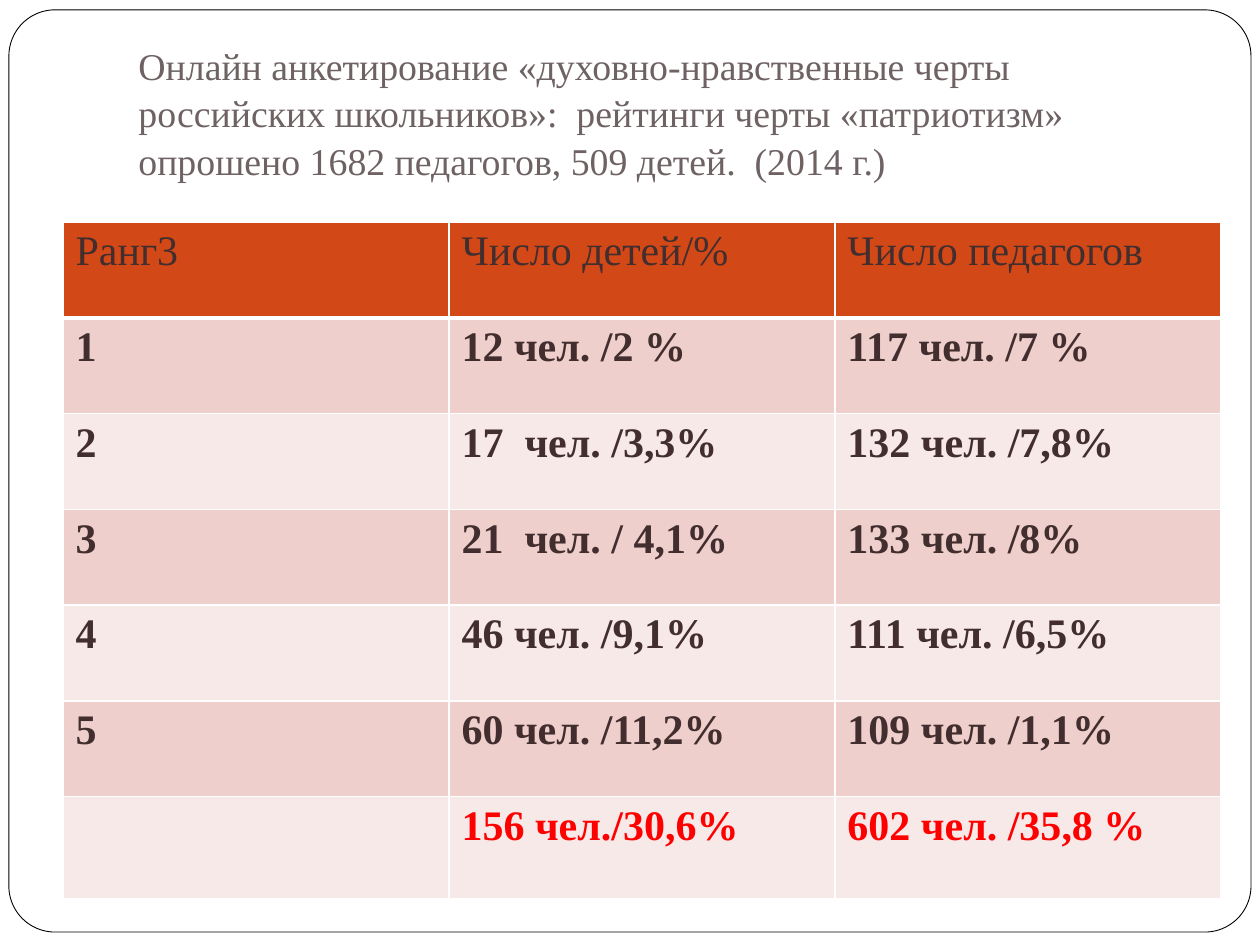
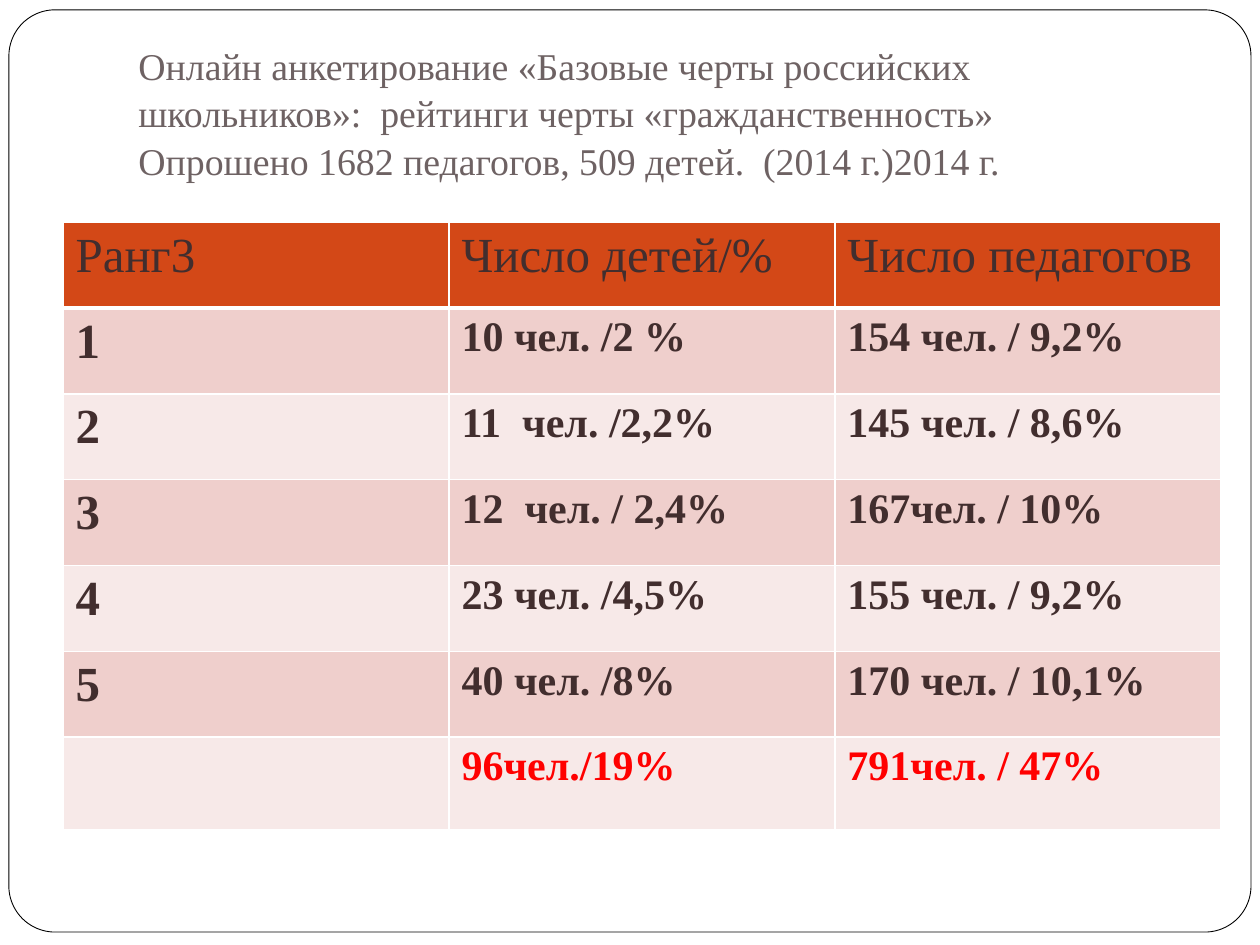
from lxml.etree import SubElement
from pptx import Presentation
from pptx.dml.color import RGBColor
from pptx.enum.shapes import MSO_SHAPE
from pptx.enum.text import MSO_ANCHOR, MSO_AUTO_SIZE, PP_ALIGN
from pptx.oxml.ns import qn
from pptx.util import Cm, Pt

WHITE = RGBColor(0xFF, 0xFF, 0xFF)
BLACK = RGBColor(0x00, 0x00, 0x00)
TITLE_GREY = RGBColor(0x6E, 0x62, 0x63)
TEXT_BROWN = RGBColor(0x42, 0x2E, 0x2E)
TOTAL_RED = RGBColor(0xFF, 0x00, 0x00)
HEADER_ORANGE = RGBColor(0xD3, 0x48, 0x17)
BANDS = [RGBColor(0xF7, 0xE9, 0xE8), RGBColor(0xEF, 0xCF, 0xCC)]
FONT = "Times New Roman"

HEADER = ("Ранг3", "Число детей/%", "Число педагогов")
COL_WIDTH = Cm(7.78)

# title, rows, row height, total row height, size of the header and rank column
SURVEYS = [
    ("Онлайн анкетирование «духовно-нравственные черты российских школьников»:  "
     "рейтинги черты «патриотизм»\n"
     "опрошено 1682 педагогов, 509 детей.  (2014 г.)",
     [("1", "12 чел. /2 %", "117 чел. /7 %"),
      ("2", "17  чел. /3,3%", "132 чел. /7,8%"),
      ("3", "21  чел. / 4,1%", "133 чел. /8%"),
      ("4", "46 чел. /9,1%", "111 чел. /6,5%"),
      ("5", "60 чел. /11,2%", "109 чел. /1,1%"),
      ("", "156 чел./30,6%", "602 чел. /35,8 %")],
     Cm(1.93), Cm(2.06), Pt(24)),
    ("Онлайн анкетирование «Базовые черты российских школьников»:  "
     "рейтинги черты «гражданственность»\n"
     "Опрошено 1682 педагогов, 509 детей.  (2014 г.)2014 г.",
     [("1", "10 чел. /2 %", "154 чел. / 9,2%"),
      ("2", "11  чел. /2,2%", "145 чел. / 8,6%"),
      ("3", "12  чел. / 2,4%", "167чел. / 10%"),
      ("4", "23 чел. /4,5%", "155 чел. / 9,2%"),
      ("5", "40 чел. /8%", "170 чел. / 10,1%"),
      ("", "96чел./19%", "791чел. / 47%")],
     Cm(1.73), Cm(1.86), Pt(28)),
]


def format_runs(p, size, color, bold=False):
    for r in p.runs:
        r.font.name = FONT
        r.font.size = size
        r.font.bold = bold
        r.font.color.rgb = color


def add_borders(cell, bottom):
    """Draw white cell borders, 1 pt except for the given bottom width."""
    tc_pr = cell._tc.get_or_add_tcPr()
    for i, (side, width) in enumerate(zip("LRTB", (1, 1, 1, bottom))):
        ln = SubElement(tc_pr, qn(f"a:ln{side}"), w=str(Pt(width)))
        fill = SubElement(ln, qn("a:solidFill"))
        SubElement(fill, qn("a:srgbClr"), val=str(WHITE))
        tc_pr.insert(i, ln)


prs = Presentation()
prs.slide_width, prs.slide_height = Cm(25.4), Cm(19.05)

for title, rows, row_height, total_height, label_size in SURVEYS:
    s = prs.slides.add_slide(prs.slide_layouts[5])

    # Rounded frame behind everything else
    frame = s.shapes.add_shape(MSO_SHAPE.ROUNDED_RECTANGLE,
                               Cm(0.18), Cm(0.2), Cm(25.04), Cm(18.59))
    frame.adjustments[0] = 0.05
    frame.shadow.inherit = False
    frame.fill.solid()
    frame.fill.fore_color.rgb = WHITE
    frame.line.color.rgb = BLACK
    frame.line.width = Pt(0.5)
    s.shapes._spTree.insert(2, frame._element)

    # Title
    sp = s.shapes.title
    sp.left, sp.top, sp.width, sp.height = Cm(2.54), Cm(0.76), Cm(21.59), Cm(3.18)
    tf = sp.text_frame
    tf.word_wrap = True
    tf.auto_size = MSO_AUTO_SIZE.NONE
    tf.vertical_anchor = MSO_ANCHOR.BOTTOM
    tf.margin_left = tf.margin_right = tf.margin_bottom = Cm(0.25)
    tf.margin_top = Cm(0.13)
    p = tf.paragraphs[0]
    p.text = title
    p.alignment = PP_ALIGN.LEFT
    p.line_spacing = 1.05
    format_runs(p, Pt(21.6), TITLE_GREY)

    # Ranking table
    grid = [HEADER] + rows
    last = len(grid) - 1
    table = s.shapes.add_table(len(grid), len(HEADER), Cm(1.27), Cm(4.48),
                               COL_WIDTH * len(HEADER),
                               row_height * last + total_height).table
    for column in table.columns:
        column.width = COL_WIDTH
    for i, texts in enumerate(grid):
        table.rows[i].height = total_height if i == last else row_height
        for j, text in enumerate(texts):
            cell = table.cell(i, j)
            cell.fill.solid()
            cell.fill.fore_color.rgb = BANDS[i % 2] if i else HEADER_ORANGE
            add_borders(cell, bottom=1 if i else 3)
            p = cell.text_frame.paragraphs[0]
            if text:
                p.text = text
            format_runs(p, label_size if i == 0 or j == 0 else Pt(24),
                        TOTAL_RED if i == last else TEXT_BROWN, bold=i > 0)

prs.save("out.pptx")
